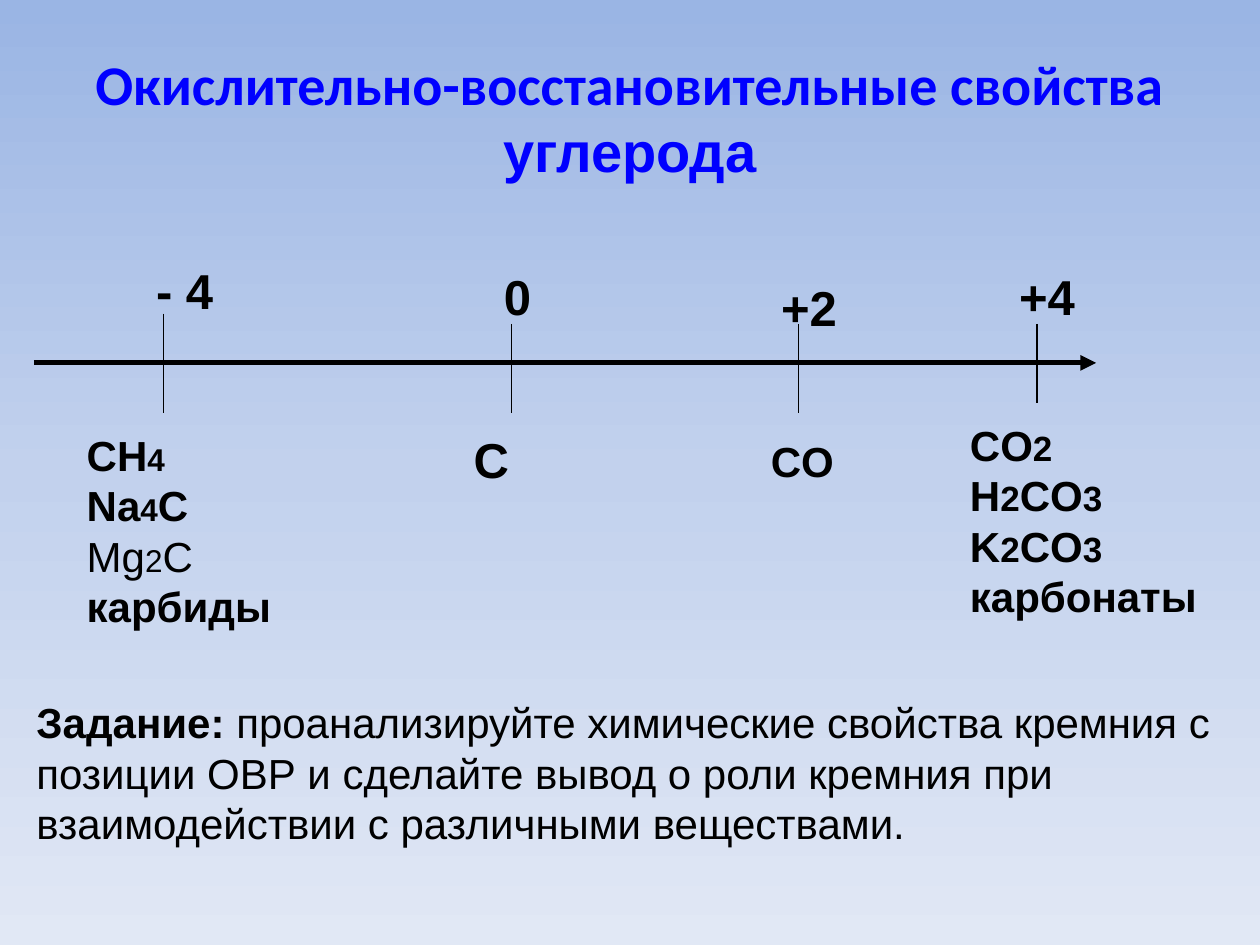
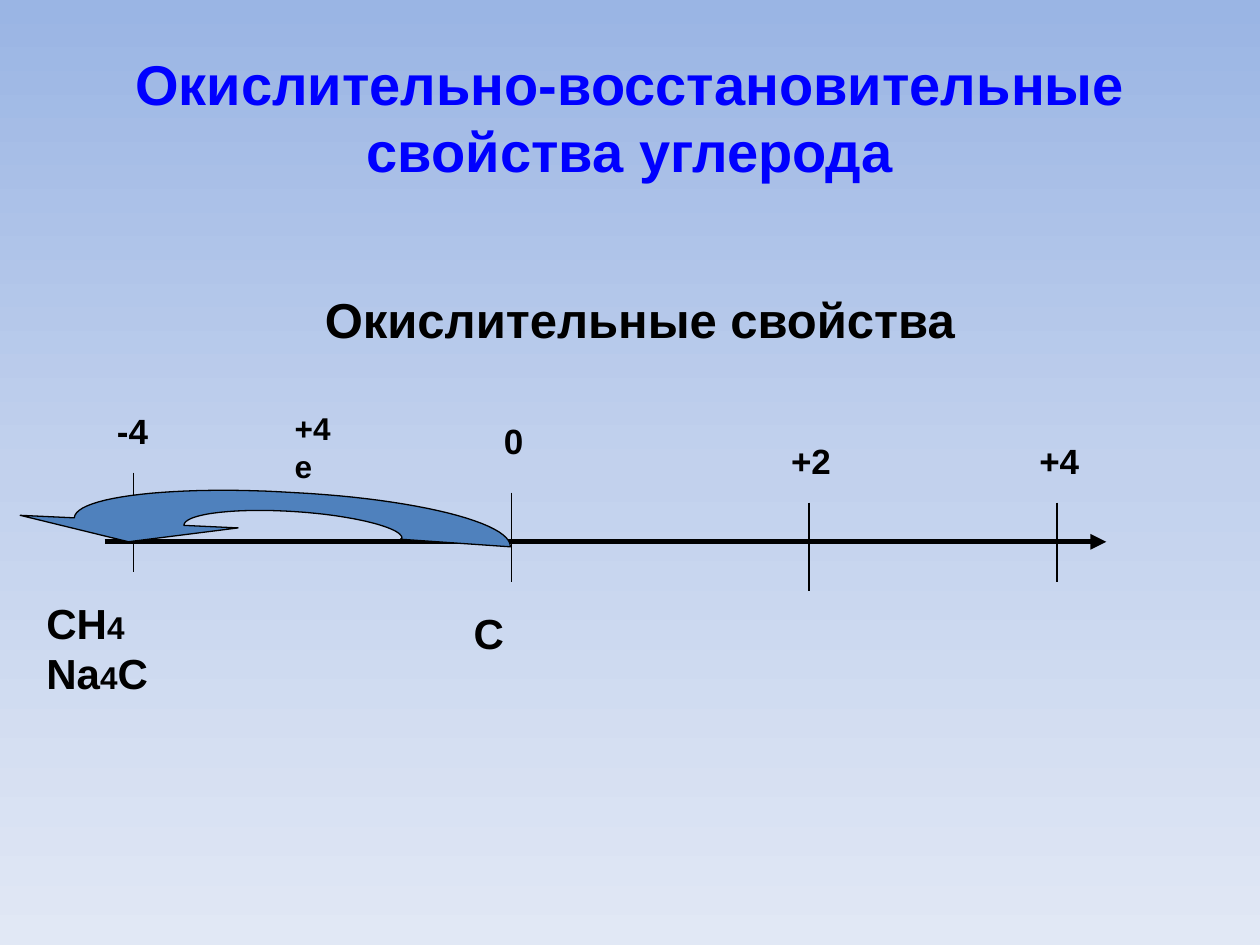
from copy import deepcopy
from itertools import groupby
from typing import NamedTuple

from lxml import etree
from pptx import Presentation
from pptx.dml.color import RGBColor
from pptx.enum.shapes import MSO_CONNECTOR
from pptx.enum.text import MSO_ANCHOR, MSO_AUTO_SIZE, PP_ALIGN
from pptx.oxml.ns import qn
from pptx.util import Inches, Pt

STRAIGHT = MSO_CONNECTOR.STRAIGHT
LEFT, CENTER = PP_ALIGN.LEFT, PP_ALIGN.CENTER
TOP, MIDDLE = MSO_ANCHOR.TOP, MSO_ANCHOR.MIDDLE
FIT, FIXED = MSO_AUTO_SIZE.SHAPE_TO_FIT_TEXT, MSO_AUTO_SIZE.NONE

BLACK = RGBColor(0x00, 0x00, 0x00)
BLUE = RGBColor(0x00, 0x00, 0xFF)
STEEL = RGBColor(0x4F, 0x81, 0xBD)
SKY = (
    (0, RGBColor(0x9A, 0xB5, 0xE4)),
    (0.5, RGBColor(0xC2, 0xD1, 0xED)),
    (1, RGBColor(0xE1, 0xE8, 0xF5)),
)


class Run(NamedTuple):
    text: str
    size: int = 28
    bold: bool = True
    font: str = "Arial"
    color: RGBColor = BLACK


class Box(NamedTuple):
    left: float
    top: float
    width: float
    height: float


class Tick(NamedTuple):
    x: float
    top: float
    end: float
    label: str
    box: Box
    wrap: bool = False


class Axis(NamedTuple):
    start: float
    end: float
    y: float
    size: int
    ticks: tuple[Tick, ...]


TITLE = Box(0.5, 0.3, 9, 1.25)

STATES = Axis(0.27, 8.7, 2.88, 28, (
    Tick(1.3, 2.49, 3.28, "- 4", Box(1.14, 2.02, 0.71, 0.57), True),
    Tick(4.06, 2.57, 3.28, "0", Box(3.9, 2.07, 0.42, 0.57)),
    Tick(6.34, 2.57, 3.28, "+2", Box(6.1, 2.15, 0.65, 0.57)),
    Tick(8.23, 2.57, 3.2, "+4", Box(7.99, 2.07, 0.65, 0.57)),
))
GAIN = Axis(0.83, 8.78, 4.3, 20, (
    Tick(1.06, 3.75, 4.54, "-4", Box(0.83, 3.2, 0.45, 0.43)),
    Tick(4.06, 3.91, 4.62, "0", Box(3.9, 3.28, 0.36, 0.43)),
    Tick(6.42, 3.99, 4.69, "+2", Box(6.18, 3.44, 0.52, 0.43)),
    Tick(8.39, 3.99, 4.62, "+4", Box(8.15, 3.44, 0.52, 0.43)),
))

SWOOP = (
    ((1.46, 4.17),),
    ((1.46, 4.08), (1.85, 4.03), (2.33, 4.06)),
    ((2.81, 4.09), (3.19, 4.19), (3.19, 4.27)),
    ((3.18, 4.28),),
    ((4.05, 4.34),),
    ((4.06, 4.15), (3.3, 3.96), (2.34, 3.91)),
    ((1.39, 3.85), (0.6, 3.94), (0.59, 4.11)),
    ((0.16, 4.09),),
    ((1.02, 4.3),),
    ((1.89, 4.19),),
)


def write(slide, box: Box, *rows: list[Run], wrap=True, align=LEFT,
          anchor=TOP, fit=FIT) -> None:
    frame = slide.shapes.add_textbox(*map(Inches, box)).text_frame
    frame.word_wrap = wrap
    frame.auto_size = fit
    frame.vertical_anchor = anchor
    for i, row in enumerate(rows):
        para = frame.add_paragraph() if i else frame.paragraphs[0]
        para.alignment = align
        for item in row:
            run = para.add_run()
            run.text = item.text
            font = run.font
            font.size, font.bold, font.name = Pt(item.size), item.bold, item.font
            font.color.rgb = item.color


def compound(text: str, small: int = 18, bold: bool = True) -> list[Run]:
    return [Run("".join(part), small if digit else 24, bold)
            for digit, part in groupby(text, str.isdigit)]


def rule(slide, x1: float, y1: float, x2: float, y2: float,
         width: float = 0.75, arrow: bool = False) -> None:
    line = slide.shapes.add_connector(STRAIGHT, *map(Inches, (x1, y1, x2, y2)))
    line.line.color.rgb = BLACK
    line.line.width = Pt(width)
    props = line.element.spPr
    if arrow:
        etree.SubElement(props.find(qn("a:ln")), qn("a:tailEnd"), type="triangle")
    etree.SubElement(props, qn("a:effectLst"))


def draw_axis(slide, axis: Axis) -> None:
    for tick in axis.ticks:
        rule(slide, tick.x, tick.top, tick.x, tick.end)
    rule(slide, axis.start, axis.y, axis.end, axis.y, 3, True)
    for tick in axis.ticks:
        write(slide, tick.box, [Run(tick.label, axis.size)], wrap=tick.wrap)


def trace(parts: tuple, steps: int = 24) -> list[tuple[float, float]]:
    points = []
    for part in parts:
        if len(part) == 1:
            points.append(part[0])
            continue
        knots = (points[-1], *part)
        for i in range(1, steps + 1):
            t = i / steps
            rates = ((1 - t) ** 3, 3 * t * (1 - t) ** 2, 3 * t * t * (1 - t), t ** 3)
            points.append(tuple(sum(r * k[axis] for r, k in zip(rates, knots))
                                for axis in (0, 1)))
    return points


def draw_swoop(slide) -> None:
    first, *rest = [tuple(map(Inches, point)) for point in trace(SWOOP)]
    pen = slide.shapes.build_freeform(*first)
    pen.add_line_segments(rest, close=True)
    shape = pen.convert_to_shape()
    shape.shadow.inherit = False
    shape.fill.solid()
    shape.fill.fore_color.rgb = STEEL
    shape.line.color.rgb = BLACK
    shape.line.width = Pt(0.75)


def add_slide(deck, *title: Run):
    slide = deck.slides.add_slide(deck.slide_layouts[6])
    fill = slide.background.fill
    fill.gradient()
    fill.gradient_angle = 270
    stops = next(slide.element.iter(qn("a:gsLst")))
    stops.insert(1, deepcopy(stops[0]))
    for stop, (place, color) in zip(fill.gradient_stops, SKY):
        stop.position = place
        stop.color.rgb = color
    write(slide, TITLE, list(title), align=CENTER, anchor=MIDDLE, fit=FIXED)
    return slide


def show_states(deck) -> None:
    slide = add_slide(
        deck,
        Run("Окислительно-восстановительные свойства ", 32, font="Calibri", color=BLUE),
        Run("углерода", 32, color=BLUE),
    )
    draw_axis(slide, STATES)
    write(slide, Box(0.59, 3.36, 2.16, 1.7), compound("СH4"), compound("Na4С"),
          compound("Mg2С", bold=False), compound("карбиды"))
    write(slide, Box(3.66, 3.36, 0.79, 0.57), [Run("С")])
    write(slide, Box(6.02, 3.41, 0.7, 0.5), compound("СO"), wrap=False)
    names = ("СO2", "H2СO3", "K2СO3", "карбонаты")
    write(slide, Box(7.6, 3.28, 2, 1.7), *(compound(name, 20) for name in names),
          wrap=False)
    write(slide, Box(0.19, 5.48, 9.81, 1.6), [
        Run("Задание: ", 24),
        Run("проанализируйте химические свойства кремния с позиции ОВР и сделайте "
            "вывод о роли кремния при взаимодействии с различными веществами.",
            24, False),
    ])


def show_gain(deck) -> None:
    slide = add_slide(
        deck, Run("Окислительно-восстановительные свойства углерода", 32, color=BLUE))
    draw_axis(slide, GAIN)
    draw_swoop(slide)
    write(slide, Box(2.48, 2.25, 5.22, 0.57), [Run("Окислительные свойства")],
          wrap=False)
    write(slide, Box(3.66, 4.77, 0.79, 0.5), compound("С"))
    write(slide, Box(2.24, 3.2, 0.62, 0.4), [Run("+4e", 18)], wrap=False)
    write(slide, Box(0.27, 4.69, 2.16, 1.3), compound("СH4"), compound("Na4С"))


def main() -> None:
    deck = Presentation()
    deck.slide_width, deck.slide_height = Inches(10), Inches(7.5)
    show_states(deck)
    show_gain(deck)
    deck.save("out.pptx")


if __name__ == "__main__":
    main()
